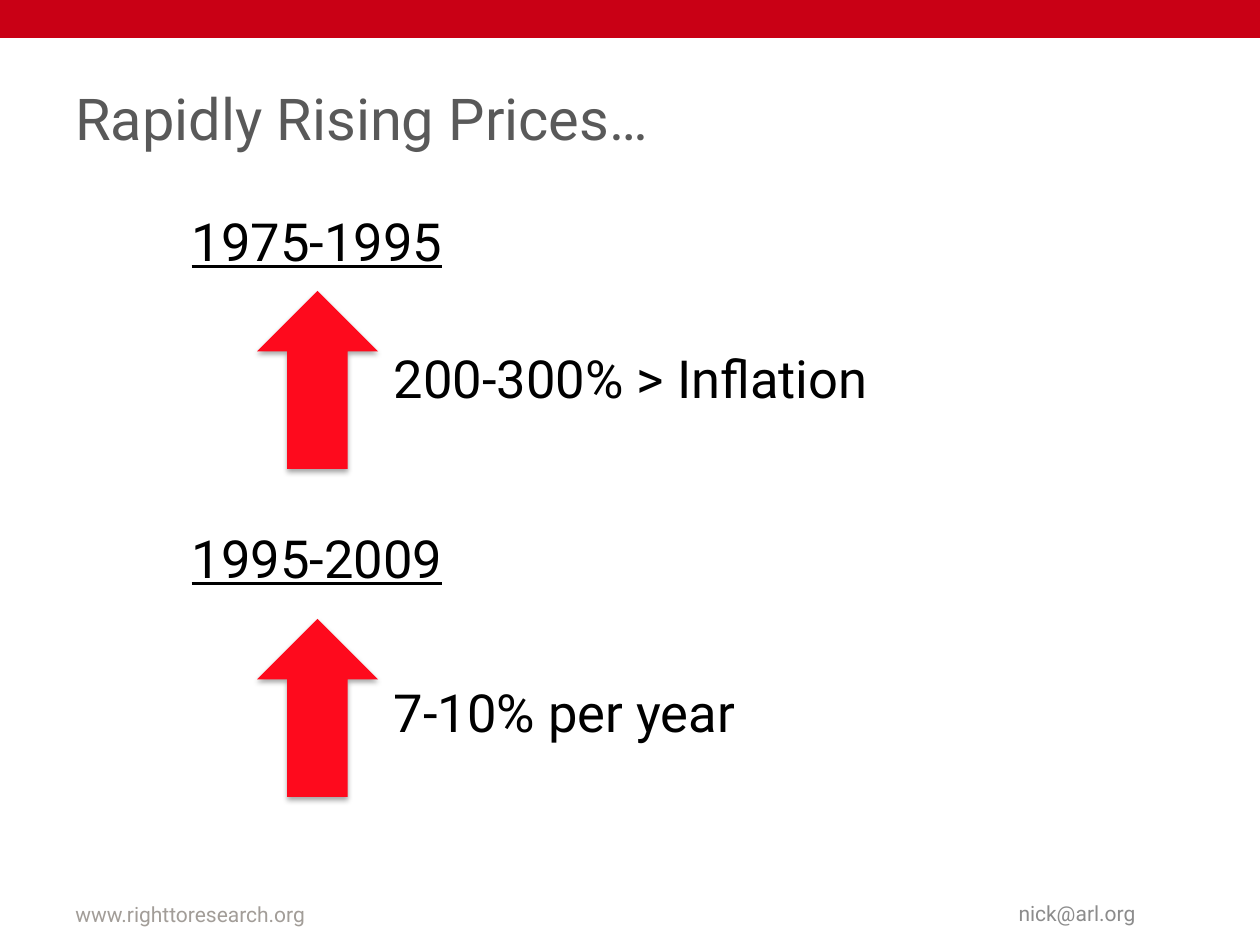
from lxml.etree import SubElement
from pptx import Presentation
from pptx.dml.color import RGBColor
from pptx.enum.shapes import MSO_SHAPE
from pptx.enum.text import MSO_ANCHOR, PP_ALIGN
from pptx.oxml.ns import qn
from pptx.util import Pt

PX = 914400 // 126
WIDTH, HEIGHT = 1260, 945
TITLE = "Rapidly Rising Prices…"
SITE, MAIL = "www.righttoresearch.org", "nick@arl.org"
PERIODS = [
    {"years": "1975-1995", "rise": "200-300% > Inflation",
     "head": 184, "arrow": 291, "note": 307},
    {"years": "1995-2009", "rise": "7-10% per year",
     "head": 501, "arrow": 619, "note": 641},
]


def tint(hue):
    return RGBColor.from_string(hue)


def add_text(slide, text, box, size=30, hue="000000", align=PP_ALIGN.LEFT,
             anchor=MSO_ANCHOR.MIDDLE, line=False, inset=None):
    frame = slide.shapes.add_textbox(*(n * PX for n in box)).text_frame
    frame.word_wrap = True
    frame.vertical_anchor = anchor
    if inset is not None:
        frame.margin_left = inset * PX
    para = frame.paragraphs[0]
    para.alignment = align
    run = para.add_run()
    run.text = text
    font = run.font
    font.name, font.size, font.underline = "Roboto", Pt(size), line
    font.color.rgb = tint(hue)


def add_block(slide, kind, box, hue):
    shape = slide.shapes.add_shape(kind, *(n * PX for n in box))
    shape.shadow.inherit = False
    shape.fill.solid()
    shape.fill.fore_color.rgb = tint(hue)
    shape.line.fill.background()
    return shape


def add_shadow(shape):
    glow = SubElement(shape.element.spPr.find(qn("a:effectLst")),
                      qn("a:outerShdw"), blurRad="40000", dist="23000",
                      dir="5400000", rotWithShape="0")
    shade = SubElement(glow, qn("a:srgbClr"), val="000000")
    SubElement(shade, qn("a:alpha"), val="35000")


def main():
    """Build the slide on rising prices."""
    deck = Presentation()
    deck.slide_width, deck.slide_height = WIDTH * PX, HEIGHT * PX
    slide = deck.slides.add_slide(deck.slide_layouts[6])
    add_block(slide, MSO_SHAPE.RECTANGLE, (0, 0, WIDTH, 38), "C90015")
    add_text(slide, TITLE, (63, 38, 1134, 158), size=33, hue="595959")
    for item in PERIODS:
        add_text(slide, item["years"], (72, item["head"], 490, 113),
                 align=PP_ALIGN.CENTER, line=True)
        add_text(slide, item["rise"], (343, item["note"], 660, 142), inset=51)
        arrow = add_block(slide, MSO_SHAPE.UP_ARROW,
                          (257, item["arrow"], 121, 178), "FE0A1D")
        add_shadow(arrow)
    add_text(slide, SITE, (63, 883, 399, 50), size=12, hue="A29D98",
             anchor=MSO_ANCHOR.BOTTOM)
    add_text(slide, MAIL, (910, 882, 238, 50), size=12, hue="8C8C8C",
             align=PP_ALIGN.RIGHT, anchor=MSO_ANCHOR.BOTTOM)
    deck.save("out.pptx")


if __name__ == "__main__":
    main()
